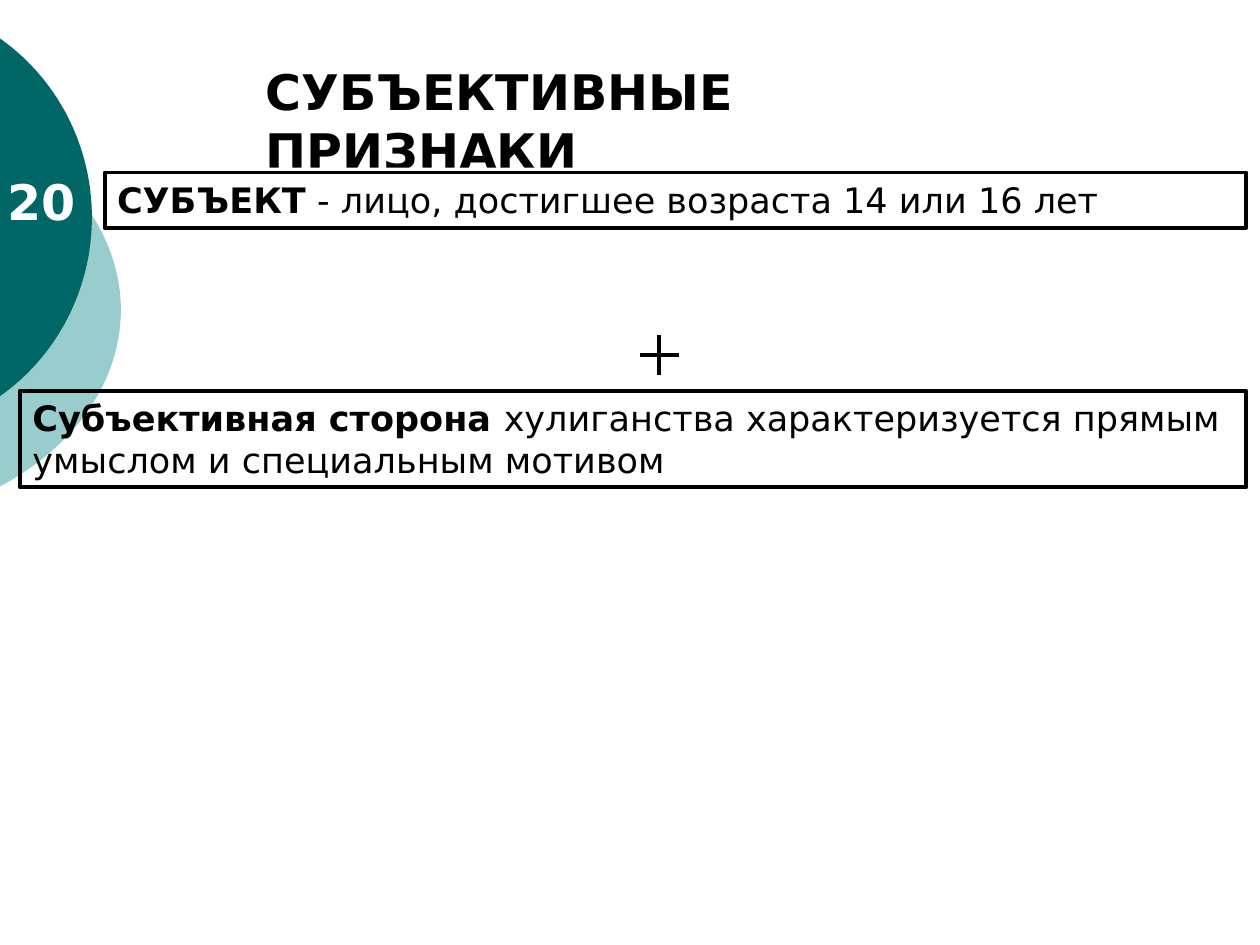
from dataclasses import dataclass
from math import acos, cos, sin

from pptx import Presentation
from pptx.dml.color import RGBColor
from pptx.enum.shapes import MSO_CONNECTOR, MSO_SHAPE
from pptx.enum.text import MSO_ANCHOR, PP_ALIGN
from pptx.oxml.ns import qn
from pptx.util import Pt

BLACK = RGBColor(0x00, 0x00, 0x00)
WHITE = RGBColor(0xFF, 0xFF, 0xFF)
TEAL = RGBColor(0x00, 0x66, 0x66)
PALE_TEAL = RGBColor(0x99, 0xCC, 0xCC)
FONT = "DejaVu Sans"
LINE_WIDTH = 2.25
ARC_STEPS = 60


@dataclass
class Disc:
    """Ellipse cut off at the left edge of the slide."""
    center_x: float
    center_y: float
    radius_x: float
    radius_y: float
    color: RGBColor


@dataclass
class Heading:
    text: str
    left: float
    top: float
    width: float
    height: float
    color: RGBColor
    wrap: bool


@dataclass
class Statement:
    term: str
    meaning: str
    left: float
    top: float
    width: float
    height: float


DISCS = [
    Disc(-92.88, 177.12, 162, 123.12, PALE_TEAL),
    Disc(-69.12, 124.2, 121.68, 124.2, TEAL),
]
PAGE_NUMBER = Heading("20", -2.9, 94.3, 54, 41, WHITE, False)
TITLE = Heading("СУБЪЕКТИВНЫЕ ПРИЗНАКИ", 144.7, 31.7, 461, 41, BLACK, True)
SUBJECT = Statement("СУБЪЕКТ", " - лицо, достигшее возраста 14 или 16 лет",
                    59.8, 98.6, 652.3, 31.7)
SUBJECTIVE_SIDE = Statement(
    "Субъективная сторона ",
    "хулиганства характеризуется прямым умыслом и специальным мотивом",
    11.5, 223.2, 700.6, 55.4)


def draw_disc(slide, disc: Disc) -> None:
    limit = acos(-disc.center_x / disc.radius_x)
    angles = [limit * (2 * i / ARC_STEPS - 1) for i in range(ARC_STEPS + 1)]
    arc = [(Pt(disc.center_x + disc.radius_x * cos(a)),
            Pt(disc.center_y + disc.radius_y * sin(a))) for a in angles]
    builder = slide.shapes.build_freeform(*arc[0])
    builder.add_line_segments(arc[1:], close=True)
    segment = builder.convert_to_shape()
    segment.shadow.inherit = False
    segment.fill.solid()
    segment.fill.fore_color.rgb = disc.color
    segment.line.fill.background()


def draw_heading(slide, heading: Heading) -> None:
    box = slide.shapes.add_textbox(Pt(heading.left), Pt(heading.top),
                                   Pt(heading.width), Pt(heading.height))
    box.text_frame.word_wrap = heading.wrap
    paragraph = box.text_frame.paragraphs[0]
    paragraph.text = heading.text
    paragraph.font.name = FONT
    paragraph.font.size = Pt(28)
    paragraph.font.bold = True
    paragraph.font.color.rgb = heading.color


def add_rectangle(slide, left: float, top: float, width: float, height: float):
    rectangle = slide.shapes.add_shape(MSO_SHAPE.RECTANGLE, Pt(left), Pt(top),
                                       Pt(width), Pt(height))
    rectangle.shadow.inherit = False
    return rectangle


def draw_statement(slide, statement: Statement) -> None:
    frame = add_rectangle(slide, statement.left, statement.top,
                          statement.width, statement.height)
    frame.fill.background()
    frame.line.color.rgb = BLACK
    frame.line.width = Pt(LINE_WIDTH)
    frame.text_frame.word_wrap = True
    frame.text_frame.vertical_anchor = MSO_ANCHOR.TOP
    paragraph = frame.text_frame.paragraphs[0]
    paragraph.alignment = PP_ALIGN.LEFT
    paragraph.font.name = FONT
    paragraph.font.size = Pt(20)
    paragraph.font.color.rgb = BLACK
    for text, bold in ((statement.term, True), (statement.meaning, False)):
        run = paragraph.add_run()
        run.text = text
        run.font.bold = bold


def draw_plus(slide, center_x: float, center_y: float, arm: float) -> None:
    for dx, dy in ((0, arm), (arm, 0)):
        stroke = slide.shapes.add_connector(
            MSO_CONNECTOR.STRAIGHT, Pt(center_x - dx), Pt(center_y - dy),
            Pt(center_x + dx), Pt(center_y + dy))
        stroke.line.color.rgb = BLACK
        stroke.line.width = Pt(LINE_WIDTH)
        properties = stroke.element.spPr
        properties.append(properties.makeelement(qn("a:effectLst"), {}))


def main() -> None:
    deck = Presentation()
    deck.slide_width, deck.slide_height = Pt(720), Pt(540)
    slide = deck.slides.add_slide(deck.slide_layouts[6])

    # Decoration at the left edge
    for disc in DISCS:
        draw_disc(slide, disc)
    draw_heading(slide, PAGE_NUMBER)

    # Subjective side, joined to the subject by a plus sign
    draw_statement(slide, SUBJECTIVE_SIDE)
    draw_plus(slide, 376.8, 203, 11.3)

    # Title, with a white band over its lower edge
    draw_heading(slide, TITLE)
    band = add_rectangle(slide, 99.4, 95.8, 595.4, 28.8)
    band.fill.solid()
    band.fill.fore_color.rgb = WHITE
    band.line.fill.background()

    # Subject
    draw_statement(slide, SUBJECT)
    deck.save("out.pptx")


if __name__ == "__main__":
    main()
